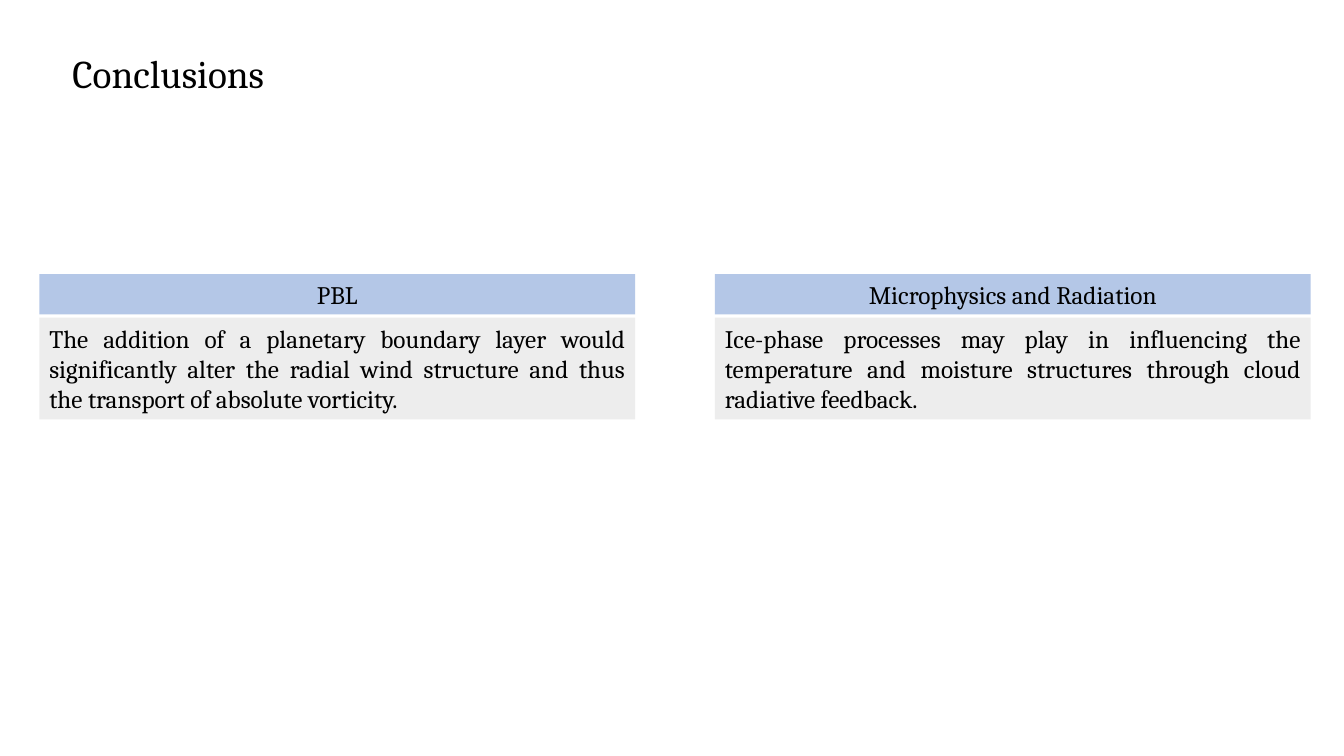
import pptx
import pptx.dml.color
import pptx.enum.shapes
import pptx.enum.text
import pptx.util

ALIGN = pptx.enum.text.PP_ALIGN
WIDTH, HEIGHT = 13.33, 7.5
CARD_LEFT, CARD_STEP, CARD_WIDTH = 0.39, 6.7, 5.91
HEADER_TOP, HEADER_HEIGHT = 2.72, 0.4
BODY_TOP, BODY_HEIGHT = 3.15, 1.01

CONCLUSIONS = [
    ("PBL",
     "The addition of a planetary boundary layer would significantly alter "
     "the radial wind structure and thus the transport of absolute vorticity."),
    ("Microphysics and Radiation",
     "Ice-phase processes may play in influencing the temperature and "
     "moisture structures through cloud radiative feedback."),
]


def color(value):
    return pptx.dml.color.RGBColor.from_string(value)


class SlideBuilder:
    """Holds the text style and the current slide; boxes are shares of its size."""

    font_name = "Cambria"
    text_color = "000000"

    def __init__(self, presentation):
        self.presentation = presentation
        self.slide = presentation.slides.add_slide(presentation.slide_layouts[6])

    def place(self, left, top, width, height):
        """Turn shares of the slide into lengths."""
        across, down = self.presentation.slide_width, self.presentation.slide_height
        return (round(left * across), round(top * down),
                round(width * across), round(height * down))

    def add_text(self, shape, text, size, align, wrap):
        frame = shape.text_frame
        frame.word_wrap = wrap
        frame.auto_size = pptx.enum.text.MSO_AUTO_SIZE.SHAPE_TO_FIT_TEXT
        paragraph = frame.paragraphs[0]
        paragraph.alignment = align
        run = paragraph.add_run()
        run.text = text
        font_format = {"name": self.font_name, "size": pptx.util.Pt(size)}
        for name, value in font_format.items():
            setattr(run.font, name, value)
        run.font.color.rgb = color(self.text_color)

    def title(self, box, text):
        shape = self.slide.shapes.add_textbox(*self.place(*box))
        self.add_text(shape, text, 28, ALIGN.LEFT, False)

    def panel(self, box, text, fill, align, wrap):
        shape = self.slide.shapes.add_shape(
            pptx.enum.shapes.MSO_SHAPE.RECTANGLE, *self.place(*box))
        shape.shadow.inherit = False
        shape.fill.solid()
        shape.fill.fore_color.rgb = color(fill)
        shape.line.fill.background()
        self.add_text(shape, text, 18, align, wrap)


def main():
    presentation = pptx.Presentation()
    presentation.slide_width = pptx.util.Inches(WIDTH)
    presentation.slide_height = pptx.util.Inches(HEIGHT)
    builder = SlideBuilder(presentation)

    builder.title((0.62 / WIDTH, 0.44 / HEIGHT, 2.22 / WIDTH, 0.57 / HEIGHT),
                  "Conclusions")
    for column, (heading, finding) in enumerate(CONCLUSIONS):
        left = (CARD_LEFT + column * CARD_STEP) / WIDTH
        width = CARD_WIDTH / WIDTH
        builder.panel((left, BODY_TOP / HEIGHT, width, BODY_HEIGHT / HEIGHT),
                      finding, "EDEDED", ALIGN.JUSTIFY, True)
        builder.panel((left, HEADER_TOP / HEIGHT, width, HEADER_HEIGHT / HEIGHT),
                      heading, "B4C7E7", ALIGN.CENTER, False)

    presentation.save("out.pptx")


if __name__ == "__main__":
    main()
